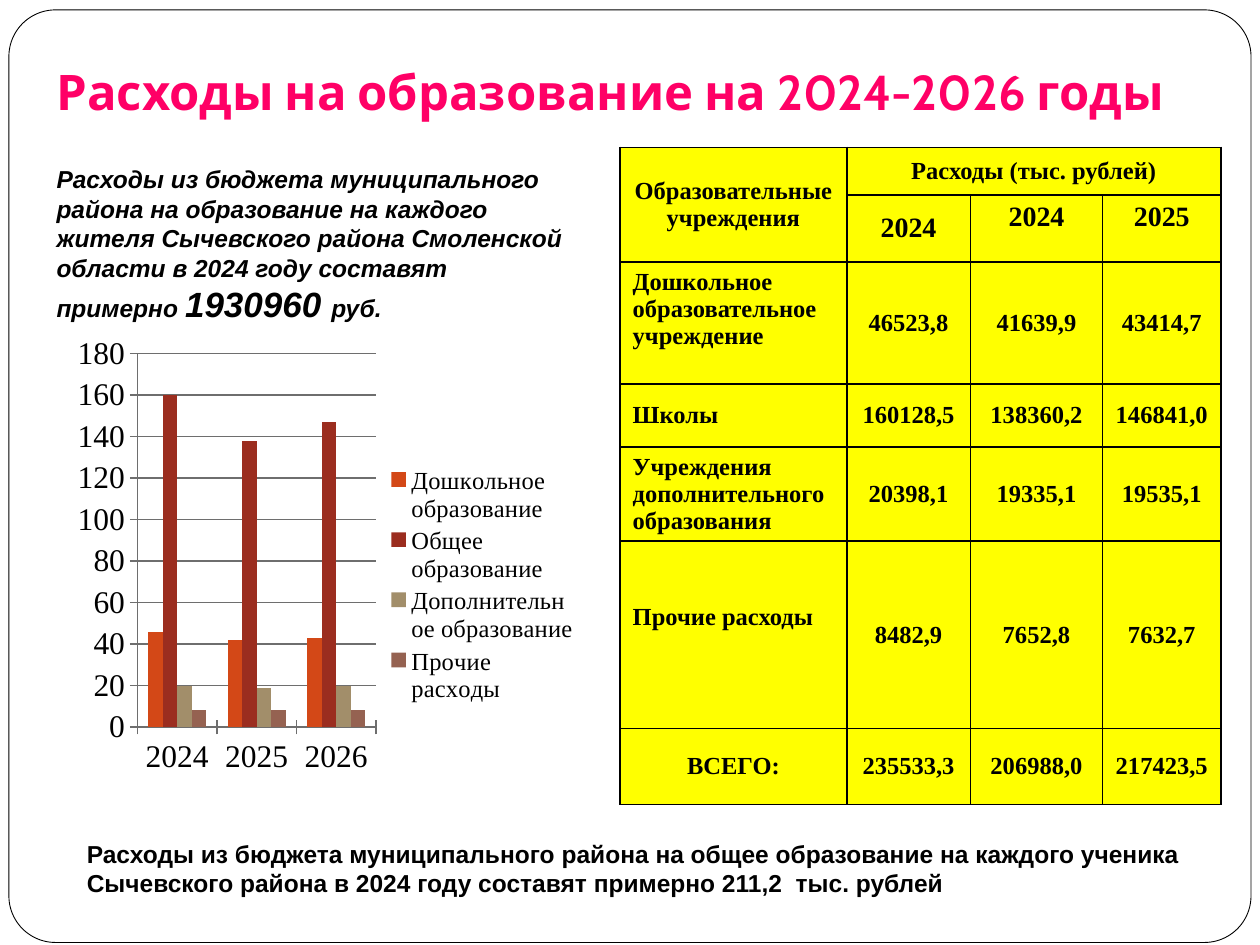
from lxml.etree import SubElement
from pptx import Presentation
from pptx.chart.data import CategoryChartData
from pptx.dml.color import RGBColor
from pptx.enum.chart import XL_CHART_TYPE, XL_LEGEND_POSITION, XL_TICK_MARK
from pptx.enum.shapes import MSO_SHAPE
from pptx.enum.text import MSO_ANCHOR, PP_ALIGN
from pptx.oxml import parse_xml
from pptx.oxml.ns import nsdecls, qn
from pptx.util import Cm, Pt

BLACK = RGBColor(0, 0, 0)
WHITE = RGBColor(255, 255, 255)
YELLOW = RGBColor(255, 255, 0)
PINK = RGBColor(0xFF, 0x00, 0x66)
GRID = RGBColor(0x6E, 0x6E, 0x6E)
SERIF = "Times New Roman"

# Content
TITLE = "Расходы на образование на 2024-2026 годы"
PER_RESIDENT = [
    ("Расходы из бюджета муниципального района на образование на каждого жителя "
     "Сычевского района Смоленской области в 2024 году составят примерно ", 14),
    ("1930960 ", 20),
    ("руб.", 14),
]
PER_PUPIL = [
    ("Расходы из бюджета муниципального района на общее образование на каждого ученика "
     "Сычевского района в 2024 году составят примерно 211,2  тыс. рублей", 14),
]
YEARS = ["2024", "2025", "2026"]
SERIES = [
    ("Дошкольное образование", (46, 42, 43), RGBColor(0xD3, 0x48, 0x17)),
    ("Общее образование", (160, 138, 147), RGBColor(0x9B, 0x2D, 0x1F)),
    ("Дополнительное образование", (20, 19, 20), RGBColor(0xA2, 0x8E, 0x6A)),
    ("Прочие расходы", (8, 8, 8), RGBColor(0x95, 0x62, 0x51)),
]
PLOT_AREA = {"x": 0.178, "y": 0.055, "w": 0.432, "h": 0.718}
ROWS = [
    ("Образовательные учреждения", "Расходы (тыс. рублей)", "", ""),
    ("", "2024", "2024", "2025"),
    ("Дошкольное образовательное учреждение", "46523,8", "41639,9", "43414,7"),
    ("Школы", "160128,5", "138360,2", "146841,0"),
    ("Учреждения\nдополнительного\nобразования", "20398,1", "19335,1", "19535,1"),
    ("Прочие расходы", "8482,9", "7652,8", "7632,7"),
    ("ВСЕГО:", "235533,3", "206988,0", "217423,5"),
]
COLUMN_WIDTHS = [4.57, 2.49, 2.67, 2.38]
ROW_HEIGHTS = [0.96, 1.35, 2.46, 1.27, 1.9, 3.78, 1.53]
TOP_CELLS = {(1, 2), (1, 3), (2, 0), (5, 0)}
YEAR_ROW, OTHER_ROW = 1, 5
JUSTIFIED_ROWS = (2, 3, 4)


def format_font(font, name, size, color=BLACK, bold=False, italic=False):
    font.name, font.size = name, Pt(size)
    font.bold, font.italic = bold, italic
    font.color.rgb = color


def add_note(slide, spans, left, top, width, height, italic=False):
    box = slide.shapes.add_textbox(Cm(left), Cm(top), Cm(width), Cm(height))
    frame = box.text_frame
    frame.word_wrap = True
    frame.vertical_anchor = MSO_ANCHOR.MIDDLE
    for text, size in spans:
        span = frame.paragraphs[0].add_run()
        span.text = text
        format_font(span.font, "Arial", size, bold=True, italic=italic)


def add_borders(cell):
    properties = cell._tc.get_or_add_tcPr()
    for index, side in enumerate(("lnL", "lnR", "lnT", "lnB")):
        properties.insert(index, parse_xml(
            f'<a:{side} {nsdecls("a")} w="12700"><a:solidFill>'
            f'<a:srgbClr val="{BLACK}"/></a:solidFill></a:{side}>'))


def add_expense_table(slide):
    table = slide.shapes.add_table(
        len(ROWS), len(COLUMN_WIDTHS), Cm(12.5), Cm(2.97),
        Cm(sum(COLUMN_WIDTHS)), Cm(sum(ROW_HEIGHTS))).table
    for column, width in zip(table.columns, COLUMN_WIDTHS):
        column.width = Cm(width)
    for row, height in zip(table.rows, ROW_HEIGHTS):
        row.height = Cm(height)
    table.cell(0, 0).merge(table.cell(1, 0))
    table.cell(0, 1).merge(table.cell(0, 3))
    for r, texts in enumerate(ROWS):
        for c, text in enumerate(texts):
            cell = table.cell(r, c)
            cell.fill.solid()
            cell.fill.fore_color.rgb = YELLOW
            add_borders(cell)
            if not text:
                continue
            cell.text_frame.text = text
            top = (r, c) in TOP_CELLS
            cell.vertical_anchor = MSO_ANCHOR.TOP if top else MSO_ANCHOR.MIDDLE
            alignment = PP_ALIGN.CENTER
            if c == 0 and r in JUSTIFIED_ROWS:
                alignment = PP_ALIGN.JUSTIFY
            elif c == 0 and r == OTHER_ROW:
                alignment = PP_ALIGN.LEFT
                cell.margin_top = Cm(1.25)
            for para in cell.text_frame.paragraphs:
                para.alignment = alignment
                for span in para.runs:
                    format_font(span.font, SERIF, 16 if r == YEAR_ROW else 14, bold=True)


def add_expense_chart(slide):
    data = CategoryChartData()
    data.categories = YEARS
    for name, values, _ in SERIES:
        data.add_series(name, values)
    chart = slide.shapes.add_chart(XL_CHART_TYPE.COLUMN_CLUSTERED, Cm(0.79), Cm(6.55),
                                   Cm(11.13), Cm(10.49), data).chart
    format_font(chart.font, SERIF, 18)
    chart.has_title = False
    chart.has_legend = True
    chart.legend.position = XL_LEGEND_POSITION.RIGHT
    chart.legend.include_in_layout = False
    format_font(chart.legend.font, SERIF, 14)

    plot = chart.plots[0]
    plot.gap_width = 150
    plot.overlap = 0
    plot.vary_by_categories = False
    for series, (_, _, color) in zip(plot.series, SERIES):
        series.format.fill.solid()
        series.format.fill.fore_color.rgb = color

    for axis in (chart.category_axis, chart.value_axis):
        axis.major_tick_mark = XL_TICK_MARK.CROSS
        axis.format.line.color.rgb = GRID
    chart.value_axis.minimum_scale = 0
    chart.value_axis.maximum_scale = 180
    chart.value_axis.major_unit = 20
    chart.value_axis.has_major_gridlines = True
    chart.value_axis.major_gridlines.format.line.color.rgb = GRID

    # Fixed inner plot area
    area = chart._chartSpace.chart.plotArea
    for old in area.findall(qn("c:layout")):
        area.remove(old)
    layout = parse_xml(f'<c:layout {nsdecls("c")}><c:manualLayout/></c:layout>')
    settings = [("layoutTarget", "inner"), ("xMode", "edge"), ("yMode", "edge")]
    for tag, value in settings + list(PLOT_AREA.items()):
        SubElement(layout[0], qn(f"c:{tag}")).set("val", str(value))
    area.insert(0, layout)


def main():
    deck = Presentation()
    deck.slide_width, deck.slide_height = Cm(25.4), Cm(19.05)
    slide = deck.slides.add_slide(deck.slide_layouts[5])

    # Rounded page frame, placed behind the title
    frame = slide.shapes.add_shape(MSO_SHAPE.ROUNDED_RECTANGLE,
                                   Cm(0.18), Cm(0.2), Cm(25.04), Cm(18.8))
    frame.adjustments[0] = 0.05
    frame.shadow.inherit = False
    frame.fill.solid()
    frame.fill.fore_color.rgb = WHITE
    frame.line.color.rgb = BLACK
    frame.line.width = Pt(0.5)
    slide.shapes._spTree.insert(2, frame._element)

    # Title
    title = slide.shapes.title
    title.left, title.top, title.width, title.height = Cm(0), Cm(0.71), Cm(24.61), Cm(1.96)
    title.text_frame.text = TITLE
    title.text_frame.vertical_anchor = MSO_ANCHOR.BOTTOM
    title.text_frame.margin_bottom = Cm(0.25)
    para = title.text_frame.paragraphs[0]
    para.alignment = PP_ALIGN.CENTER
    format_font(para.runs[0].font, "Cabin", 28, PINK, bold=True)

    # Table, notes and chart
    add_expense_table(slide)
    add_note(slide, PER_RESIDENT, 0.89, 3.12, 10.8, 3.61, italic=True)
    add_note(slide, PER_PUPIL, 1.5, 16.92, 22.86, 1.17)
    add_expense_chart(slide)
    deck.save("out.pptx")


if __name__ == "__main__":
    main()
